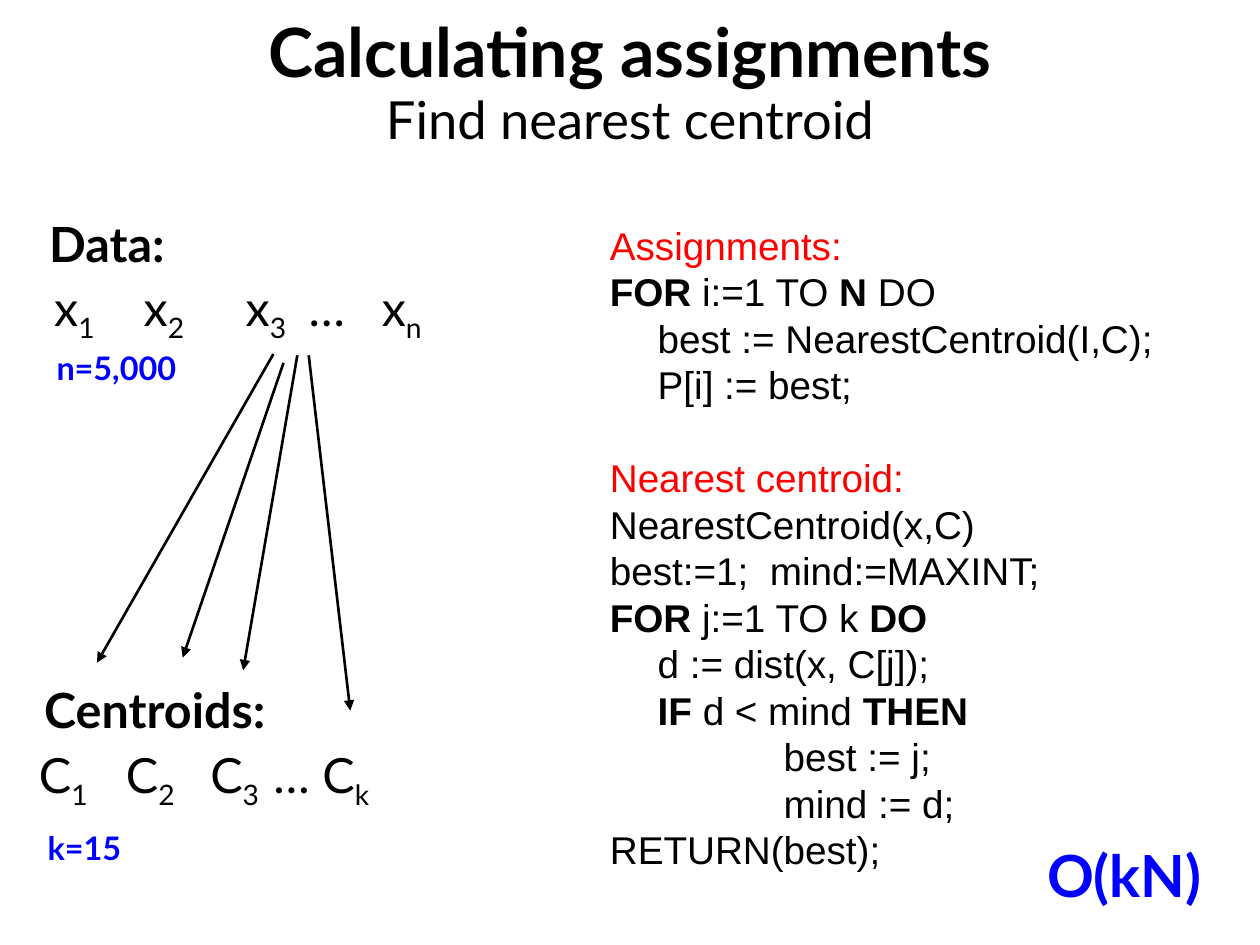
from dataclasses import dataclass
from typing import NamedTuple

from lxml.etree import SubElement as Sub
from pptx import Presentation
from pptx.dml.color import RGBColor as Rgb
from pptx.enum.shapes import MSO_CONNECTOR as Conn, MSO_SHAPE as Form
from pptx.enum.text import MSO_ANCHOR as Anchor, PP_ALIGN as Align
from pptx.oxml.ns import qn
from pptx.util import Inches, Pt


@dataclass(frozen=True)
class Theme:
    black: Rgb = Rgb(0, 0, 0)
    white: Rgb = Rgb(255, 255, 255)
    red: Rgb = Rgb(255, 0, 0)
    blue: Rgb = Rgb(0, 0, 255)
    sans: str = "Lato"
    code: str = "Arial"
    title: float = 38.8
    sub: float = 30
    big: float = 33.2
    body: float = 27.7
    note: float = 18.5
    list: float = 22.1
    pitch: float = 26.57


T = Theme()


class Run(NamedTuple):
    text: str
    bold: bool = False
    low: bool = False


class Line(NamedTuple):
    runs: tuple[Run, ...]
    size: float
    color: Rgb = T.black
    font: str = T.sans
    left: float = 0
    tabs: tuple[float, ...] = ()
    form: dict = {}


class Box(NamedTuple):
    at: tuple[float, float, float, float]
    lines: list[Line]
    mid: bool = False
    pad: float = 0
    fill: bool = False


class Arrow(NamedTuple):
    start: tuple[float, float]
    end: tuple[float, float]


def apply(item, form: dict) -> None:
    for key, value in form.items():
        setattr(item, key, value)


def write(para, line: Line) -> None:
    apply(para, line.form)
    props = para._p.get_or_add_pPr()
    if line.left:
        props.set("marL", str(Inches(line.left)))
        props.set("indent", "0")
    if line.tabs:
        stops = Sub(props, qn("a:tabLst"))
        for pos in line.tabs:
            Sub(stops, qn("a:tab"), pos=str(Inches(pos)), algn="l")
    for part in line.runs:
        run = para.add_run()
        run.text = part.text
        apply(run.font, {"name": line.font, "size": Pt(line.size), "bold": part.bold})
        run.font.color.rgb = line.color
        if part.low:
            run.font._element.set("baseline", "-25000")


def draw_box(slide, box: Box) -> None:
    at = [Inches(n) for n in box.at]
    if box.fill:
        shape = slide.shapes.add_shape(Form.RECTANGLE, *at)
        shape.shadow.inherit = False
        shape.fill.solid()
        shape.fill.fore_color.rgb = T.white
        shape.line.fill.background()
    else:
        shape = slide.shapes.add_textbox(*at)
    frame = shape.text_frame
    apply(frame, {
        "word_wrap": True,
        "vertical_anchor": Anchor.MIDDLE if box.mid else Anchor.TOP,
        "margin_left": Inches(box.pad), "margin_right": Inches(box.pad),
        "margin_top": Inches(box.pad / 2), "margin_bottom": Inches(box.pad / 2),
    })
    for i, line in enumerate(box.lines):
        write(frame.add_paragraph() if i else frame.paragraphs[0], line)


def draw_arrow(slide, arrow: Arrow) -> None:
    ends = [Inches(n) for n in arrow.start + arrow.end]
    link = slide.shapes.add_connector(Conn.STRAIGHT, *ends)
    link.line.color.rgb = T.black
    link.line.width = Pt(1.5)
    Sub(link.line._get_or_add_ln(), qn("a:tailEnd"), type="triangle")
    Sub(link._element.spPr, qn("a:effectLst"))


def code(*runs: Run, left: float = 0, color: Rgb = T.black,
         gap: float = 0, tabs: tuple[float, ...] = ()) -> Line:
    form = {"alignment": Align.LEFT, "line_spacing": Pt(T.pitch), "space_before": Pt(gap)}
    return Line(runs, T.list, color, T.code, left, tabs, form)


def head(text: str, size: float, bold: bool) -> Line:
    form = {"alignment": Align.CENTER, "line_spacing": 0.93}
    return Line((Run(text, bold),), size, form=form)


def label(at, text: str, size: float = T.body, color: Rgb = T.black) -> Box:
    return Box(at, [Line((Run(text, True),), size, color)])


def note(at, text: str) -> Box:
    line = Line((Run(text, True),), T.note, T.blue, form={"line_spacing": 0.8})
    return Box(at, [line], mid=True, pad=0.1)


def series(at, name: str, last: str, tabs: tuple[float, ...]) -> Box:
    runs = []
    for i, index in enumerate(("1", "2", "3", last)):
        lead = "\t…\t" if index == last else "\t" if i else ""
        runs += [Run(lead + name), Run(index, low=True)]
    return Box(at, [Line(tuple(runs), T.body, tabs=tabs)])


# Pseudocode, indented by level
ONE, TWO = 0.38, 1.38
FOR = Run("FOR", True)
CODE = [
    code(Run("Assignments:"), color=T.red),
    code(FOR, Run(" i:=1 TO "), Run("N", True), Run(" DO")),
    code(Run("best := NearestCentroid(I,C);"), left=ONE),
    code(Run("P[i] := best;"), left=ONE),
    code(Run("Nearest centroid:"), color=T.red, gap=T.pitch),
    code(Run("NearestCentroid(x,C)")),
    code(Run("best:=1;\tmind:=MAXINT;"), tabs=(1.27,)),
    code(FOR, Run(" j:=1 TO k "), Run("DO", True)),
    code(Run("d := dist(x, C[j]);"), left=ONE),
    code(Run("IF", True), Run(" d < mind "), Run("THEN", True), left=ONE),
    code(Run("best := j;"), left=TWO),
    code(Run("mind := d;"), left=TWO),
    code(Run("RETURN(best);")),
]

BOXES = [
    Box((4.84, 1.76, 4.45, 5.22), CODE, fill=True),
    # Title
    Box((0.71, 0.13, 8.58, 1.08), [
        head("Calculating assignments", T.title, True),
        head("Find nearest centroid", T.sub, False),
    ], mid=True),
    # Data and centroids
    series((0.43, 2.21, 3.59, 0.47), "x", "n", (0.71, 1.52, 2.02, 2.6)),
    series((0.31, 5.91, 3.06, 0.47), "C", "k", (0.69, 1.36, 1.86, 2.25)),
    note((0.35, 2.77, 1.32, 0.35), "n=5,000"),
    note((0.28, 6.58, 0.9, 0.35), "k=15"),
    label((0.35, 5.4, 2.01, 0.47), "Centroids:"),
    label((0.39, 1.7, 1.06, 0.47), "Data:"),
    # Complexity
    label((8.31, 6.66, 1.42, 0.56), "O(kN)", T.big, T.blue),
]

# From one data point to every centroid
ARROWS = [
    Arrow((2.17, 2.81), (0.77, 5.26)),
    Arrow((2.25, 2.88), (1.45, 5.22)),
    Arrow((2.36, 2.82), (1.93, 5.32)),
    Arrow((2.45, 2.82), (2.78, 5.64)),
]


def main() -> None:
    deck = Presentation()
    apply(deck, {"slide_width": Inches(10), "slide_height": Inches(7.5)})
    slide = deck.slides.add_slide(deck.slide_layouts[6])
    for box in BOXES:
        draw_box(slide, box)
    for arrow in ARROWS:
        draw_arrow(slide, arrow)
    deck.save("out.pptx")


if __name__ == "__main__":
    main()
